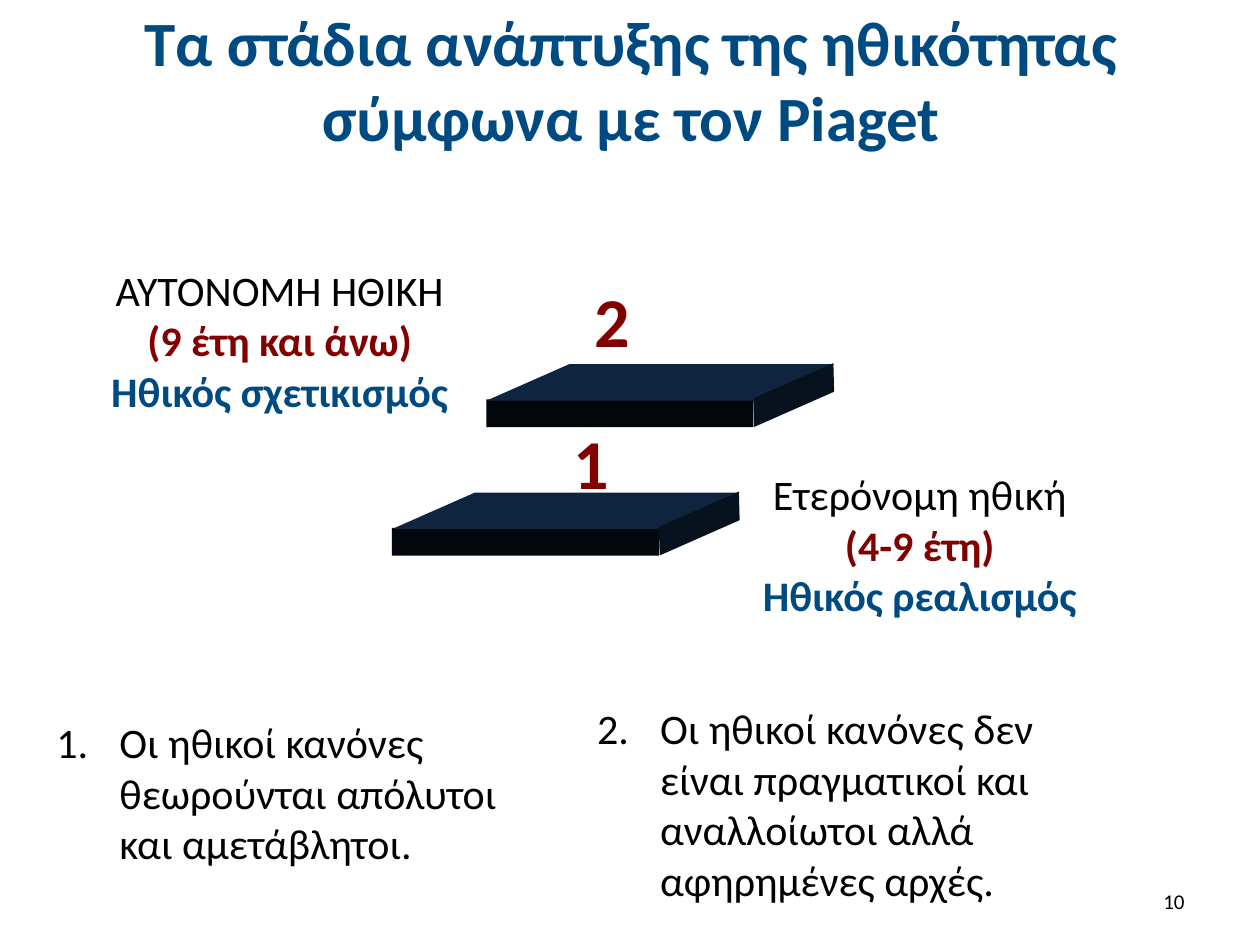
from dataclasses import dataclass

from lxml.etree import SubElement
from pptx import Presentation
from pptx.dml.color import RGBColor
from pptx.enum.shapes import MSO_SHAPE
from pptx.enum.text import MSO_ANCHOR, PP_ALIGN
from pptx.oxml.ns import qn
from pptx.util import Inches, Pt

COLUMNS, ROWS = 100, 75
CELL = Inches(0.1)


@dataclass(frozen=True)
class Theme:
    font: str = "Calibri"
    blue: str = "004A82"
    red: str = "820000"
    black: str = "000000"
    step_front: str = "03070C"
    step_top: str = "0F243E"
    step_side: str = "08121F"
    title_size: int = 36
    number_size: int = 40
    body_size: int = 24
    footer_size: int = 12


@dataclass(frozen=True)
class Box:
    """A region of the slide, in grid columns and rows."""
    left: float
    top: float
    width: float
    height: float

    def inside(self, left, top, width, height):
        return Box(self.left + left, self.top + top, width, height)

    def lengths(self):
        return [round(value * CELL) for value in (self.left, self.top, self.width, self.height)]


THEME = Theme()


def add_text(slide, box, lines, size, align=PP_ALIGN.LEFT, anchor=MSO_ANCHOR.TOP, wrap=True):
    """Place a text box; each line is (text, colour, bold)."""
    text_frame = slide.shapes.add_textbox(*box.lengths()).text_frame
    text_frame.word_wrap = wrap
    text_frame.vertical_anchor = anchor
    text_frame.text = "\n".join(text for text, _, _ in lines)
    for paragraph, (_, color, bold) in zip(text_frame.paragraphs, lines):
        paragraph.alignment = align
        font = paragraph.runs[0].font
        font.name = THEME.font
        font.size = Pt(size)
        font.bold = bold
        font.color.rgb = RGBColor.from_string(color)
    return text_frame


def add_title(slide, box, text):
    add_text(slide, box, [(text, THEME.blue, True)], THEME.title_size,
             PP_ALIGN.CENTER, MSO_ANCHOR.MIDDLE)


def add_page_number(slide, box, number):
    add_text(slide, box, [(str(number), THEME.black, False)], THEME.footer_size,
             PP_ALIGN.RIGHT, MSO_ANCHOR.MIDDLE)


def add_step(slide, box):
    """Draw a solid stair step from its front, top and side faces."""
    group = slide.shapes.add_group_shape()
    faces = [
        (MSO_SHAPE.RECTANGLE, box.inside(0, 2.8, 21.2, 2.2), THEME.step_front, None, 0),
        (MSO_SHAPE.PARALLELOGRAM, box.inside(0, 0, 27.6, 2.9), THEME.step_top, 2.27, 0),
        (MSO_SHAPE.PARALLELOGRAM, box.inside(20.5, 1.4, 7.8, 2.1), THEME.step_side, 0.41, -23.8),
    ]
    for kind, face, color, slant, rotation in faces:
        shape = group.shapes.add_shape(kind, *face.lengths())
        shape.shadow.inherit = False
        shape.fill.solid()
        shape.fill.fore_color.rgb = RGBColor.from_string(color)
        shape.line.fill.background()
        shape.rotation = rotation
        if slant is not None:
            shape.adjustments[0] = slant


def add_step_number(slide, box, number):
    add_text(slide, box, [(str(number), THEME.red, True)], THEME.number_size, wrap=False)


def add_stage_label(slide, box, name, ages, outlook):
    lines = [(name, THEME.black, False), (ages, THEME.red, True), (outlook, THEME.blue, True)]
    add_text(slide, box, lines, THEME.body_size, PP_ALIGN.CENTER)


def add_numbered_rule(slide, box, number, text):
    text_frame = add_text(slide, box, [(text, THEME.black, False)], THEME.body_size)
    properties = text_frame.paragraphs[0]._p.get_or_add_pPr()
    properties.set("marL", str(5 * CELL))
    properties.set("indent", str(-5 * CELL))
    SubElement(properties, qn("a:buFont"), typeface="+mj-lt")
    SubElement(properties, qn("a:buAutoNum"), type="arabicPeriod", startAt=str(number))


def main():
    presentation = Presentation()
    presentation.slide_width = COLUMNS * CELL
    presentation.slide_height = ROWS * CELL
    slide = presentation.slides.add_slide(presentation.slide_layouts[6])

    add_title(slide, Box(5.1, 1.3, 90, 9.9),
              "Τα στάδια ανάπτυξης της ηθικότητας σύμφωνα με τον Piaget")
    add_page_number(slide, Box(71.7, 69.5, 23.3, 4), 10)

    add_step(slide, Box(31.1, 39.1, 28.3, 5))
    add_step_number(slide, Box(44.5, 32.8, 3.9, 7.7), 1)
    add_stage_label(slide, Box(58.2, 36.7, 29.6, 13.1),
                    "Ετερόνομη ηθική", "(4-9 έτη)", "Ηθικός ρεαλισμός")

    add_step(slide, Box(38.6, 28.9, 28.3, 5))
    add_step_number(slide, Box(46.2, 21.5, 3.9, 7.7), 2)
    add_stage_label(slide, Box(7.4, 20.5, 29.6, 13.1),
                    "ΑΥΤΟΝΟΜΗ ΗΘΙΚΗ", "(9 έτη και άνω)", "Ηθικός σχετικισμός")

    add_numbered_rule(slide, Box(3.5, 56.4, 37.4, 13.1), 1,
                      "Οι ηθικοί κανόνες θεωρούνται απόλυτοι και αμετάβλητοι.")
    add_numbered_rule(slide, Box(46.4, 55.3, 39, 17.2), 2,
                      "Οι ηθικοί κανόνες δεν είναι πραγματικοί και αναλλοίωτοι "
                      "αλλά αφηρημένες αρχές.")

    presentation.save("out.pptx")


if __name__ == "__main__":
    main()
